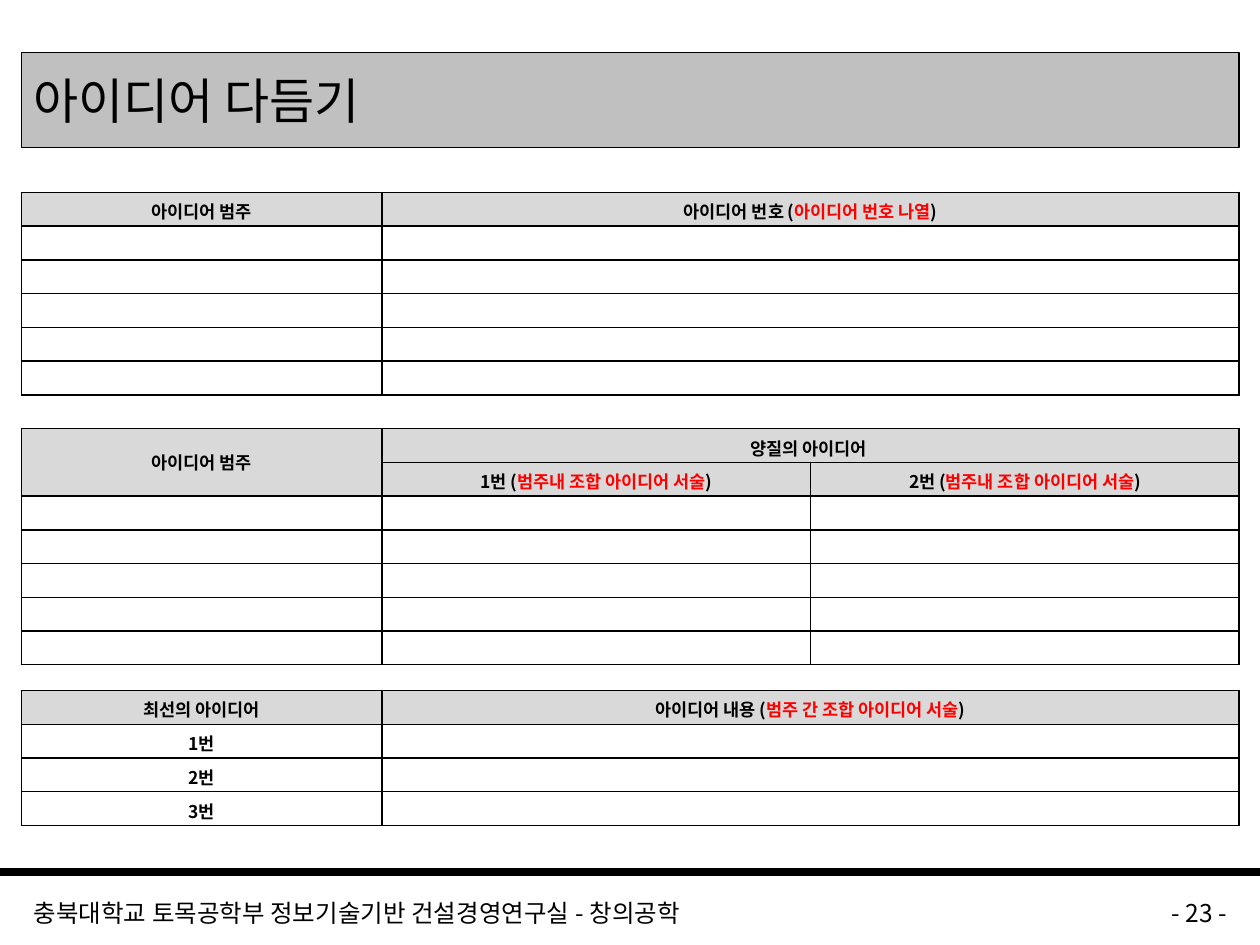
"""Build the idea refinement worksheet slide with three blank tables."""
from lxml.etree import SubElement
from pptx import Presentation
from pptx.dml.color import RGBColor
from pptx.enum.shapes import MSO_CONNECTOR, MSO_SHAPE
from pptx.enum.text import MSO_ANCHOR, PP_ALIGN
from pptx.oxml import parse_xml
from pptx.oxml.ns import nsdecls, qn
from pptx.util import Cm, Pt

THEME = {
    "font": "Noto Sans CJK KR",
    "ink": "000000", "accent": "FF0000", "banner": "C0C0C0", "header": "D9D9D9",
    "title": 28, "footer": 14, "cell": 10,
    "outline": 0.75, "border": 1, "rule": 4.5,
}
TITLE = "아이디어 다듬기"
FOOTER = "충북대학교 토목공학부 정보기술기반 건설경영연구실 - 창의공학"
PAGE_NUMBER = "- 23 -"
COMBINE_HINT = "범주내 조합 아이디어 서술"

TABLES = [
    {"top": 3.88, "columns": [7.27, 17.28], "rows": 6, "header_rows": 1, "merges": [],
     "cells": {(0, 0): ["아이디어 범주"],
               (0, 1): ["아이디어 번호 (", "아이디어 번호 나열", ")"]}},
    {"top": 8.64, "columns": [7.27, 8.64, 8.64], "rows": 7, "header_rows": 2,
     "merges": [((0, 0), (1, 0)), ((0, 1), (0, 2))],
     "cells": {(0, 0): ["아이디어 범주"],
               (0, 1): ["양질의 아이디어 "],
               (1, 1): ["1번 (", COMBINE_HINT, ")"],
               (1, 2): ["2번 (", COMBINE_HINT, ")"]}},
    {"top": 13.92, "columns": [7.27, 17.28], "rows": 4, "header_rows": 1, "merges": [],
     "cells": {(0, 0): ["최선의 아이디어"],
               (0, 1): ["아이디어 내용 (", "범주 간 조합 아이디어 서술", ")"],
               (1, 0): ["1번"], (2, 0): ["2번"], (3, 0): ["3번"]}},
]
LEFT, WIDTH, ROW_HEIGHT = 0.43, 24.55, 0.68
SLIDE_WIDTH, SLIDE_HEIGHT = 25.4, 19.05
RULE_TOP, FOOTER_TOP, FOOTER_HEIGHT = 17.58, 17.98, 0.64


def color(name):
    return RGBColor.from_string(THEME[name])


def apply(target, values):
    for name, value in values.items():
        setattr(target, name, value)


def write(paragraph, pieces, size, bold=False, align=PP_ALIGN.LEFT):
    paragraph.alignment = align
    for index, text in enumerate(pieces):
        run = paragraph.add_run()
        run.text = text
        apply(run.font, {"name": THEME["font"], "size": Pt(THEME[size]), "bold": bold})
        run.font.color.rgb = color("accent" if index == 1 else "ink")
        SubElement(run.font._element, qn("a:ea"), typeface=THEME["font"])
    if not pieces:
        SubElement(paragraph._p, qn("a:endParaRPr"), sz=str(THEME[size] * 100))


def add_title(slide):
    banner = slide.shapes.add_shape(
        MSO_SHAPE.RECTANGLE, Cm(LEFT), Cm(1.06), Cm(WIDTH), Cm(1.91))
    banner.shadow.inherit = False
    banner.fill.solid()
    banner.fill.fore_color.rgb = color("banner")
    banner.line.color.rgb = color("ink")
    banner.line.width = Pt(THEME["outline"])
    apply(banner.text_frame, {"word_wrap": True, "vertical_anchor": MSO_ANCHOR.MIDDLE})
    write(banner.text_frame.paragraphs[0], [TITLE], "title")


def add_footer(slide):
    rule = slide.shapes.add_connector(
        MSO_CONNECTOR.STRAIGHT, 0, Cm(RULE_TOP), Cm(SLIDE_WIDTH), Cm(RULE_TOP))
    rule.line.color.rgb = color("ink")
    rule.line.width = Pt(THEME["rule"])
    SubElement(rule._element.spPr, qn("a:effectLst"))
    page_width = 4.23
    page_left = LEFT + WIDTH - page_width
    for text, left, width, align in [
            (FOOTER, LEFT, 19.9, PP_ALIGN.LEFT),
            (PAGE_NUMBER, page_left, page_width, PP_ALIGN.RIGHT)]:
        box = slide.shapes.add_textbox(
            Cm(left), Cm(FOOTER_TOP), Cm(width), Cm(FOOTER_HEIGHT))
        box.text_frame.word_wrap = True
        write(box.text_frame.paragraphs[0], [text], "footer", align=align)


def add_borders(cell):
    properties = cell._tc.get_or_add_tcPr()
    for index, side in enumerate(("lnL", "lnR", "lnT", "lnB")):
        properties.insert(index, parse_xml(
            f'<a:{side} {nsdecls("a")} w="{Pt(THEME["border"])}"><a:solidFill>'
            f'<a:srgbClr val="{THEME["ink"]}"/></a:solidFill></a:{side}>'))


def add_table(slide, content):
    rows, columns = content["rows"], content["columns"]
    table = slide.shapes.add_table(
        rows, len(columns), Cm(LEFT), Cm(content["top"]),
        Cm(WIDTH), Cm(ROW_HEIGHT * rows)).table
    apply(table, {"first_row": False, "horz_banding": False})
    for column, width in zip(table.columns, columns):
        column.width = Cm(width)
    for row_index, row in enumerate(table.rows):
        row.height = Cm(ROW_HEIGHT)
        for column_index, cell in enumerate(row.cells):
            if row_index < content["header_rows"]:
                cell.fill.solid()
                cell.fill.fore_color.rgb = color("header")
            else:
                cell.fill.background()
            add_borders(cell)
            pieces = content["cells"].get((row_index, column_index), [])
            write(cell.text_frame.paragraphs[0], pieces, "cell", True, PP_ALIGN.CENTER)
    for first, last in content["merges"]:
        table.cell(*first).merge(table.cell(*last))
        if last[0] > first[0]:
            table.cell(*first).vertical_anchor = MSO_ANCHOR.MIDDLE


def main():
    presentation = Presentation()
    apply(presentation, {"slide_width": Cm(SLIDE_WIDTH), "slide_height": Cm(SLIDE_HEIGHT)})
    slide = presentation.slides.add_slide(presentation.slide_layouts[6])
    add_footer(slide)
    add_title(slide)
    for content in TABLES:
        add_table(slide, content)
    presentation.save("out.pptx")


if __name__ == "__main__":
    main()
